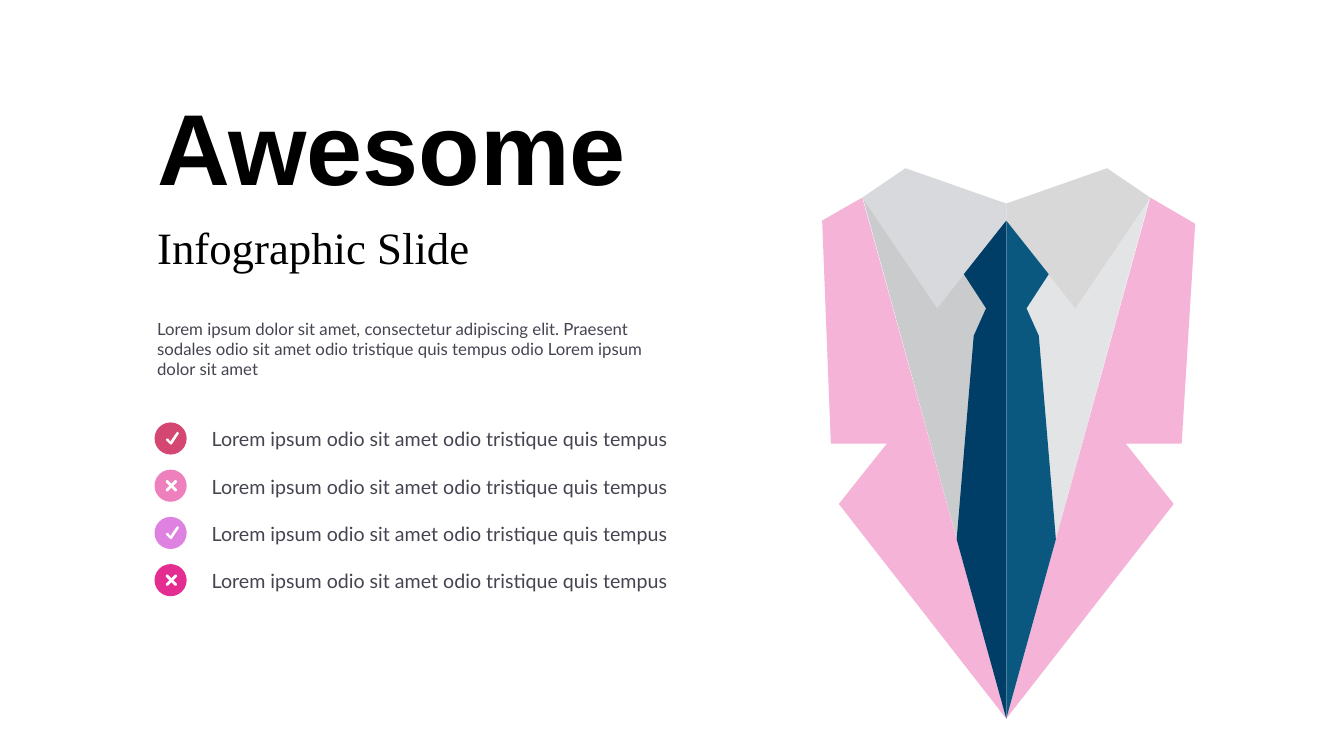
from lxml import etree
from pptx import Presentation
from pptx import util as u
from pptx.dml.color import RGBColor
from pptx.enum import shapes, text
from pptx.oxml.ns import qn

BLACK = RGBColor(0x00, 0x00, 0x00)
WHITE = RGBColor(0xFF, 0xFF, 0xFF)
SLATE = RGBColor(0x45, 0x45, 0x51)
PINK = RGBColor(0xF4, 0xB3, 0xD7)
NAVY = RGBColor(0x00, 0x3E, 0x67)
BLUE = RGBColor(0x0A, 0x57, 0x80)
SILVER = RGBColor(0xCA, 0xCB, 0xCC)
PALE = RGBColor(0xE3, 0xE4, 0xE5)
MIST = RGBColor(0xD8, 0xD9, 0xDC)
ASH = RGBColor(0xD8, 0xD8, 0xD8)
ROSE = RGBColor(0xD5, 0x47, 0x73)
BLUSH = RGBColor(0xEE, 0x81, 0xBD)
LILAC = RGBColor(0xDF, 0x81, 0xE1)
FUCHSIA = RGBColor(0xE3, 0x2D, 0x91)

CHECK = [(-0.03, 0.15), (-0.13, 0.05), (-0.13, 0.01), (-0.08, 0), (-0.03, 0.08),
         (0.13, -0.15), (0.16, -0.17), (0.19, -0.13), (0.01, 0.15)]
ARM = [(0.05, 0), (0.14, -0.09), (0.14, -0.12), (0.12, -0.14), (0.09, -0.14)]
CROSS = (ARM + [(y, -x) for x, y in ARM] + [(-x, -y) for x, y in ARM]
         + [(-y, x) for x, y in ARM])

AXIS, TIP = 25.36, 18.11
SHIRT = [(3.61, 5), (0, TIP), (0, 5.56)]
LAPEL = [(4.42, 11.18), (3.01, 11.18), (4.22, 12.7), (0, TIP), (3.63, 4.98)]
COLLAR = [(2.54, 4.24), (0, 5.13), (0, 5.56), (1.74, 7.77), (3.63, 4.98)]
TIE = [(0, 5.56), (1.07, 6.91), (0.51, 7.77), (0.82, 8.46), (1.25, 13.59), (0, TIP)]
SIDES = [(-1, (4.64, 5.56), SILVER, MIST, NAVY),
         (1, (4.76, 5.64), PALE, ASH, BLUE)]

ITEM = "Lorem ipsum odio sit amet odio tristique quis tempus"
MARKS = [(ROSE, CHECK), (BLUSH, CROSS), (LILAC, CHECK), (FUCHSIA, CROSS)]


class Deck:
    def __init__(self):
        self.prs = Presentation()
        self.prs.slide_width = u.Cm(33.87)
        self.prs.slide_height = u.Cm(19.05)
        self.slide = self.prs.slides.add_slide(self.prs.slide_layouts[1])
        self.shapes = self.slide.shapes

    def paint(self, shape, color):
        shape.shadow.inherit = False
        shape.fill.solid()
        shape.fill.fore_color.rgb = color
        shape.line.fill.background()

    def poly(self, points, color, x=0.0, y=0.0, flip=1):
        spots = [(u.Cm(x + flip * a), u.Cm(y + b)) for a, b in points]
        pen = self.shapes.build_freeform(*spots[0])
        pen.add_line_segments(spots[1:], close=True)
        self.paint(pen.convert_to_shape(), color)

    def disc(self, x, y, size, color):
        edge = u.Cm(size)
        spot = self.shapes.add_shape(shapes.MSO_SHAPE.OVAL, u.Cm(x - size / 2),
                                     u.Cm(y - size / 2), edge, edge)
        self.paint(spot, color)

    def style(self, box, area, words, font, size, color, bold=False,
              anchor=text.MSO_ANCHOR.TOP, lead=1.0, gap=0):
        box.left, box.top, box.width, box.height = [u.Cm(n) for n in area]
        frame = box.text_frame
        frame.text = words
        frame.word_wrap = True
        frame.auto_size = text.MSO_AUTO_SIZE.NONE
        frame.vertical_anchor = anchor
        for para in frame.paragraphs:
            para.alignment = text.PP_ALIGN.LEFT
            para.line_spacing = lead
            para.space_before = u.Pt(0)
            para.space_after = u.Pt(gap)
            for run in para.runs:
                run.font.name = font
                run.font.size = u.Pt(size)
                run.font.bold = bold
                run.font.color.rgb = color

    def title(self, area, words, **look):
        self.style(self.shapes.title, area, words, **look)

    def label(self, area, words, **look):
        self.style(self.shapes.add_textbox(0, 0, 0, 0), area, words, **look)

    def list(self, area, items, **look):
        body = self.slide.placeholders[1]
        self.style(body, area, "\n".join(items), **look)
        for para in body.text_frame.paragraphs:
            props = para._p.get_or_add_pPr()
            props.set("marL", "0")
            props.set("indent", "0")
            etree.SubElement(props, qn("a:buNone"))


def main():
    deck = Deck()
    for flip, shoulder, shirt, collar, tie in SIDES:
        for points, color in [(SHIRT, shirt), ([shoulder] + LAPEL, PINK),
                              (COLLAR, collar), (TIE, tie)]:
            deck.poly(points, color, x=AXIS, flip=flip)

    deck.title((3.71, 1.85, 13.23, 4.01), "Awesome", font="Arial", size=72,
               color=BLACK, bold=True, anchor=text.MSO_ANCHOR.MIDDLE, lead=0.9)
    deck.label((3.71, 5.41, 11.79, 1.63), "Infographic Slide",
               font="Times New Roman", size=32, color=BLACK)
    deck.label((3.71, 7.9, 13.41, 1.8),
               "Lorem ipsum dolor sit amet, consectetur adipiscing elit. "
               "Praesent sodales odio sit amet odio tristique quis tempus odio "
               "Lorem ipsum dolor sit amet", font="Lato", size=12, color=SLATE)
    deck.list((5.08, 10.64, 12.12, 4.5), [ITEM] * len(MARKS),
              font="Lato", size=14, color=SLATE, gap=17)
    for row, (color, mark) in enumerate(MARKS):
        y = 11.05 + 1.19 * row
        deck.disc(4.3, y, 0.81, color)
        deck.poly(mark, WHITE, x=4.32, y=y)

    deck.prs.save("out.pptx")


if __name__ == "__main__":
    main()
